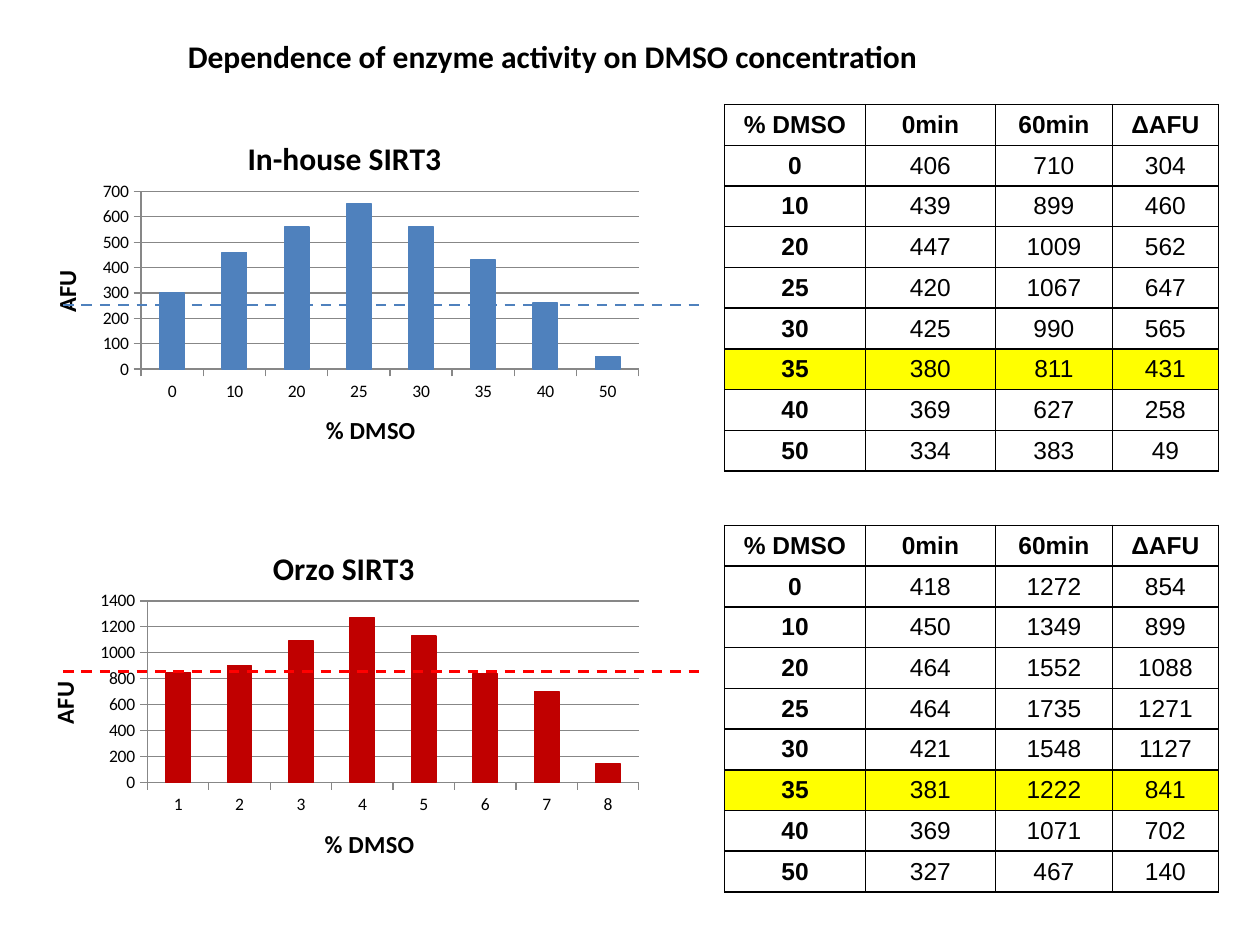
from dataclasses import dataclass

from lxml.etree import SubElement
from pptx import Presentation
from pptx.chart.data import CategoryChartData
from pptx.dml.color import RGBColor
from pptx.enum.chart import XL_CHART_TYPE, XL_TICK_MARK
from pptx.enum.dml import MSO_LINE
from pptx.enum.shapes import MSO_CONNECTOR
from pptx.enum.text import MSO_ANCHOR, PP_ALIGN
from pptx.oxml import parse_xml
from pptx.oxml.ns import nsdecls, qn
from pptx.util import Inches, Pt


@dataclass(frozen=True)
class Theme:
    """Colours, fonts and type sizes of the slide."""
    black: str = "000000"
    grid: str = "878787"
    blue: str = "4F81BD"
    dark_red: str = "C00000"
    red: str = "FF0000"
    yellow: str = "FFFF00"
    heading_font: str = "Calibri"
    table_font: str = "Arial"
    title_size: int = 18
    label_size: int = 14
    tick_size: int = 10


THEME = Theme()
DMSO = (0, 10, 20, 25, 30, 35, 40, 50)
HIGHLIGHT = 35
IN_HOUSE = ((406, 710), (439, 899), (447, 1009), (420, 1067),
            (425, 990), (380, 811), (369, 627), (334, 383))
PURCHASED = ((418, 1272), (450, 1349), (464, 1552), (464, 1735),
             (421, 1548), (381, 1222), (369, 1071), (327, 467))


def rgb(value):
    """Turn a hex string into a colour."""
    return RGBColor.from_string(value)


def style_font(font, size, name, bold):
    """Apply size, typeface, weight and the text colour."""
    font.size, font.name, font.bold = Pt(size), name, bold
    font.color.rgb = rgb(THEME.black)


def add_run(p, text, size, name, bold=True):
    """Add one styled run to a paragraph."""
    r = p.add_run()
    r.text = text
    style_font(r.font, size, name, bold)


def add_title(s, text, x, y, w, h):
    """Place and format the slide title."""
    sp = s.shapes.title
    sp.left, sp.top, sp.width, sp.height = map(Inches, (x, y, w, h))
    tf = sp.text_frame
    tf.word_wrap = False
    tf.vertical_anchor = MSO_ANCHOR.MIDDLE
    p = tf.paragraphs[0]
    p.alignment = PP_ALIGN.LEFT
    add_run(p, text, THEME.title_size, THEME.heading_font)


def set_borders(cell):
    """Draw a thin black line on every side of a cell."""
    tc_pr = cell._tc.get_or_add_tcPr()
    for i, side in enumerate(("lnL", "lnR", "lnT", "lnB")):
        ln = parse_xml(
            f'<a:{side} {nsdecls("a")} w="{Pt(1)}"><a:solidFill>'
            f'<a:srgbClr val="{THEME.black}"/></a:solidFill></a:{side}>')
        tc_pr.insert(i, ln)


def add_readings(s, readings, x, y, w, h):
    """Add the table of readings with the computed difference."""
    rows = [("% DMSO", "0min", "60min", "ΔAFU")]
    rows += [(d, a, b, b - a) for d, (a, b) in zip(DMSO, readings)]
    frame = s.shapes.add_table(len(rows), 4, *map(Inches, (x, y, w, h)))
    table = frame.table
    table.horz_banding = table.first_row = False
    for col, width in zip(table.columns, (1.12, 1.03, 0.93, 0.84)):
        col.width = Inches(width)
    for i, row in enumerate(rows):
        table.rows[i].height = Inches(h / len(rows))
        for j, value in enumerate(row):
            cell = table.cell(i, j)
            cell.margin_left = cell.margin_right = 0
            cell.margin_top = cell.margin_bottom = 0
            cell.vertical_anchor = MSO_ANCHOR.MIDDLE
            if row[0] == HIGHLIGHT:
                cell.fill.solid()
                cell.fill.fore_color.rgb = rgb(THEME.yellow)
            else:
                cell.fill.background()
            set_borders(cell)
            p = cell.text_frame.paragraphs[0]
            p.alignment = PP_ALIGN.CENTER
            add_run(p, str(value), THEME.label_size, THEME.table_font,
                    i == 0 or j == 0)


def set_layout(parent, **fractions):
    """Fix the place of a chart part in fractions of the chart."""
    layout = parent.find(qn("c:layout"))
    if layout is None:
        layout = parse_xml(f'<c:layout {nsdecls("c")}/>')
        tx = parent.find(qn("c:tx"))
        parent.insert(0 if tx is None else 1, layout)
    manual = SubElement(layout, qn("c:manualLayout"))
    if "w" in fractions:
        SubElement(manual, qn("c:layoutTarget"), val="inner")
    for axis in "xy":
        SubElement(manual, qn(f"c:{axis}Mode"), val="edge")
    for key, value in fractions.items():
        SubElement(manual, qn(f"c:{key}"), val=str(value))


def style_axis(axis, text):
    """Format an axis and its title."""
    axis.major_tick_mark = XL_TICK_MARK.OUTSIDE
    axis.format.line.color.rgb = rgb(THEME.grid)
    style_font(axis.tick_labels.font, THEME.tick_size, THEME.heading_font, False)
    add_run(axis.axis_title.text_frame.paragraphs[0], text,
            THEME.label_size, THEME.heading_font)


def add_activity_chart(s, name, cats, readings, color, step, title_x, plot,
                       x, y, w, h):
    """Add the column chart of activity by concentration."""
    data = CategoryChartData()
    data.categories = [str(c) for c in cats]
    data.add_series(name, [round(b - a, -1) for a, b in readings])
    chart = s.shapes.add_chart(XL_CHART_TYPE.COLUMN_CLUSTERED,
                               *map(Inches, (x, y, w, h)), data).chart
    chart.has_legend = False
    style_font(chart.font, THEME.tick_size, THEME.heading_font, False)
    title = chart.chart_title
    add_run(title.text_frame.paragraphs[0], name,
            THEME.title_size, THEME.heading_font)
    title.include_in_layout = False
    set_layout(title._element, x=title_x, y=0.07)
    style_axis(chart.category_axis, "% DMSO")
    axis = chart.value_axis
    style_axis(axis, "AFU")
    axis.minimum_scale, axis.maximum_scale, axis.major_unit = 0, 7 * step, step
    axis.major_gridlines.format.line.color.rgb = rgb(THEME.grid)
    columns = chart.plots[0]
    columns.gap_width, columns.vary_by_categories = 150, False
    set_layout(chart._chartSpace.chart.plotArea, **plot)
    fmt = columns.series[0].format
    fmt.fill.solid()
    fmt.fill.fore_color.rgb = rgb(color)
    fmt.line.color.rgb = rgb(color)
    fmt.line.width = Pt(0.75)


def add_threshold(s, color, x, y, w):
    """Add a dashed horizontal line across a chart."""
    line = s.shapes.add_connector(MSO_CONNECTOR.STRAIGHT, Inches(x), Inches(y),
                                  Inches(x + w), Inches(y))
    line.line.color.rgb = rgb(color)
    line.line.width = Pt(1.5)
    line.line.dash_style = MSO_LINE.DASH
    SubElement(line._element.spPr, qn("a:effectLst"))


def main():
    """Build and save the slide."""
    prs = Presentation()
    prs.slide_width, prs.slide_height = Inches(10), Inches(7.5)
    s = prs.slides.add_slide(prs.slide_layouts[5])
    add_title(s, "Dependence of enzyme activity on DMSO concentration",
              1.39, 0.24, 6.04, 0.4)
    add_readings(s, IN_HOUSE, 5.75, 0.83, 3.92, 2.91)
    add_readings(s, PURCHASED, 5.75, 4.17, 3.92, 2.91)
    add_activity_chart(s, "Orzo SIRT3", range(1, 9), PURCHASED, THEME.dark_red,
                       200, 0.39, dict(x=0.2, y=0.23, w=0.78, h=0.48),
                       0.17, 4.08, 5, 3)
    add_threshold(s, THEME.red, 0.5, 5.33, 5.08)
    add_activity_chart(s, "In-house SIRT3", DMSO, IN_HOUSE, THEME.blue,
                       100, 0.35, dict(x=0.19, y=0.23, w=0.79, h=0.47),
                       0.17, 0.83, 5, 3)
    add_threshold(s, THEME.blue, 0.5, 2.42, 5.08)


    prs.save("out.pptx")


if __name__ == "__main__":
    main()
